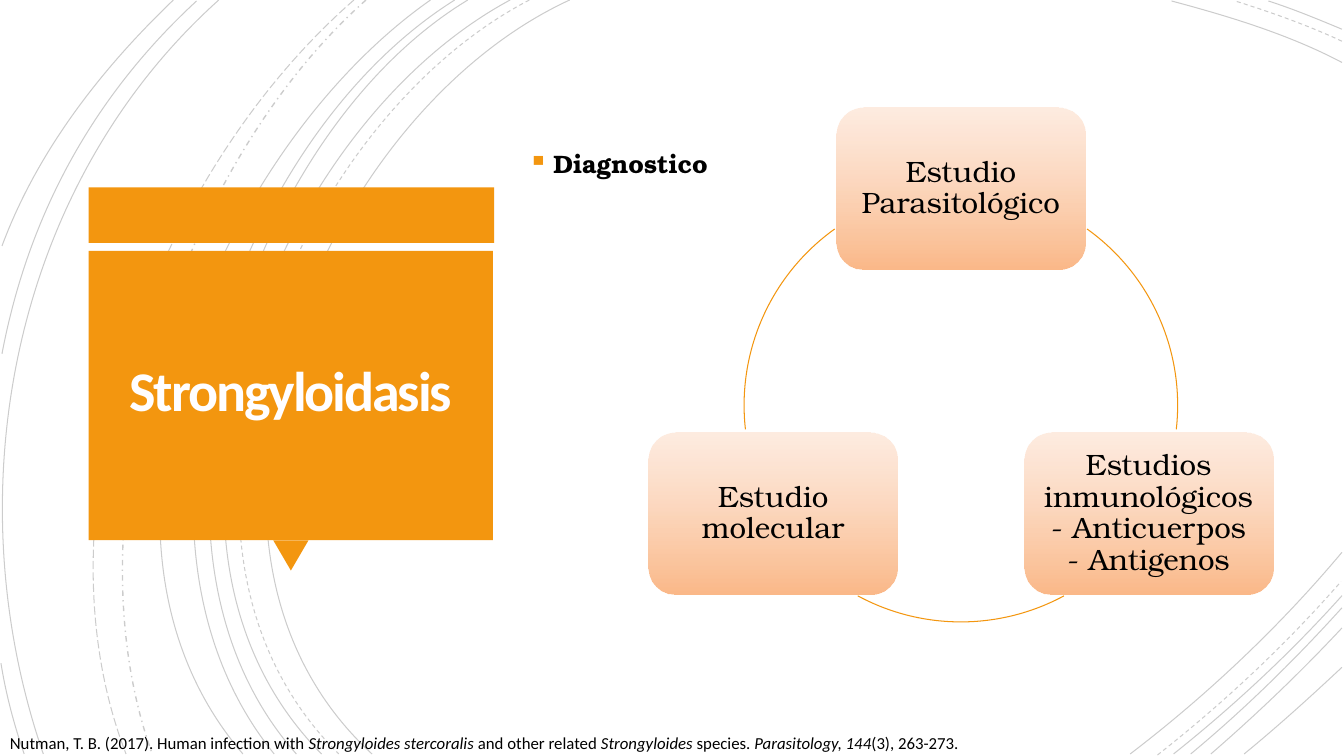
from math import cos, radians, sin, tan

from lxml import etree
from pptx import Presentation
from pptx.dml.color import RGBColor
from pptx.enum.dml import MSO_LINE
from pptx.enum.shapes import MSO_SHAPE
from pptx.enum.text import MSO_ANCHOR, PP_ALIGN
from pptx.oxml.ns import qn
from pptx.util import Cm, Pt

ORANGE = RGBColor(0xF3, 0x96, 0x0F)
PALE = RGBColor(0xFD, 0xDF, 0xCC)
PEACH = RGBColor(0xFB, 0xB3, 0x7F)
BLACK = RGBColor(0, 0, 0)
WHITE = RGBColor(0xFF, 0xFE, 0xFF)
RECT, ROUND, WEDGE = MSO_SHAPE.RECTANGLE, MSO_SHAPE.ROUNDED_RECTANGLE, MSO_SHAPE.ISOSCELES_TRIANGLE
MIDDLE, TOP = MSO_ANCHOR.MIDDLE, MSO_ANCHOR.TOP
LEFT, CENTER = PP_ALIGN.LEFT, PP_ALIGN.CENTER
SOLID, DASH = MSO_LINE.SOLID, MSO_LINE.DASH
DASHDOT, LONG = MSO_LINE.DASH_DOT, MSO_LINE.LONG_DASH
SANS, SERIF = "Calibri", "TeX Gyre Bonum"

TITLE = "Strongyloidasis"
TOPIC = "Diagnostico"
STUDIES = [
    "Estudio Parasitológico",
    "Estudios inmunológicos\n- Anticuerpos\n- Antigenos",
    "Estudio molecular",
]
# Text and whether it is italic
CITE = [
    ("Nutman, T. B. (2017). Human infection with ", False),
    ("Strongyloides stercoralis", True),
    (" and other related ", False),
    ("Strongyloides", True),
    (" species. ", False),
    ("Parasitology, 144", True),
    ("(3), 263-273.", False),
]
# Start, two handles and end of each background curve, by line style
CURVES = {
    (SOLID, 0.75): [
        [(5.65, 0), (3.15, 1.15), (1.43, 5.4), (3.69, 7.48)],
        [(13.31, 0.62), (12.78, 0.34), (12.18, 0.16), (11.62, 0.01)],
        [(11.21, 7.48), (11.97, 6.9), (12.69, 6.22), (13.31, 5.48)],
        [(5.06, 0), (2.7, 1.27), (1.1, 5.37), (3.19, 7.48)],
        [(13.31, 0.29), (13.07, 0.19), (12.83, 0.09), (12.58, 0.01)],
        [(11.64, 7.48), (12.23, 7.01), (12.8, 6.48), (13.31, 5.91)],
        [(4.64, 0), (2.44, 1.33), (1.1, 5.41), (2.94, 7.48)],
        [(11.81, 7.48), (12.34, 7.04), (12.84, 6.55), (13.31, 6.03)],
        [(4.51, 0), (2.31, 1.38), (0.97, 5.33), (2.72, 7.48)],
        [(12.01, 7.48), (12.46, 7.09), (12.9, 6.67), (13.31, 6.23)],
        [(4.27, 0), (2.17, 1.47), (0.53, 5.29), (2.41, 7.48)],
        [(12.34, 7.48), (12.67, 7.21), (12.99, 6.92), (13.31, 6.62)],
        [(2.17, 0), (0.11, 1.85), (-0.46, 4.9), (0.43, 7.48)],
        [(1.95, 0.01), (0.92, 0.96), (0.28, 2.14), (0.02, 3.51)],
        [(0.01, 6.58), (0.06, 6.89), (0.14, 7.19), (0.24, 7.48)],
        [(1.72, 0), (1, 0.69), (0.37, 1.5), (0.02, 2.44)],
    ],
    (DASH, 0.75): [
        [(5.25, 0), (2.85, 1.25), (1.23, 5.37), (3.36, 7.48)],
        [(13.31, 0.41), (12.97, 0.25), (12.6, 0.12), (12.25, 0.01)],
        [(11.48, 7.49), (12.13, 6.98), (12.75, 6.4), (13.3, 5.77)],
    ],
    (DASHDOT, 1): [[(3.63, 0), (1.76, 1.66), (0.65, 5.09), (1.51, 7.48)]],
    (LONG, 0.75): [[(3.51, 0), (1.57, 1.69), (0.29, 4.99), (1.25, 7.48)]],
}
# Shape, place and turn of the title panel's parts
PANEL = [
    (RECT, (0.88, 1.86, 4.02, 0.55), 0),
    (WEDGE, (2.71, 5.36, 0.35, 0.3), 180),
    (RECT, (0.88, 2.49, 4.01, 2.87), 0),
]
HUB_X, HUB_Y, RADIUS = 9.53, 4.02, 2.15
BOX_W, BOX_H = 2.47, 1.61
ARCS = [(-54.4, 6.4), (61.6, 118.4), (173.6, 234.4)]


def cm(inch):
    return Cm(inch * 2.54)


def fade(shape, levels):
    """Set the opacity, in percent, of the shape's colours in turn."""
    tones = shape._element.spPr.iter(qn("a:srgbClr"))
    for tone, level in zip(list(tones), levels):
        etree.SubElement(tone, qn("a:alpha")).set("val", str(level * 1000))


def curve(points, color, width=0.75, dash=SOLID):
    """Draw one cubic curve through its two handles."""
    spots = [(cm(x), cm(y)) for x, y in points]
    pen = slide.shapes.build_freeform(*spots[0])
    pen.add_line_segments(spots[1:], close=False)
    shape = pen.convert_to_shape()
    steps = list(shape._element.spPr.iter(qn("a:lnTo")))
    bend = etree.SubElement(steps[0].getparent(), qn("a:cubicBezTo"))
    for step in steps:
        bend.append(step[0])
        step.getparent().remove(step)
    shape.fill.background()
    shape.shadow.inherit = False
    shape.line.color.rgb = color
    shape.line.width = Pt(width)
    shape.line.dash_style = dash
    return shape


def block(kind, place):
    shape = slide.shapes.add_shape(kind, *map(cm, place))
    shape.shadow.inherit = False
    shape.line.fill.background()
    return shape


def write(shape, lines, look, align=LEFT, gap=1.0, anchor=TOP, inset=None):
    """Fill a shape with one paragraph; lines hold (text, italic) runs."""
    frame = shape.text_frame
    frame.word_wrap = True
    frame.vertical_anchor = anchor
    if inset is not None:
        for side in ("left", "right", "top", "bottom"):
            setattr(frame, "margin_" + side, cm(inset))
    para = frame.paragraphs[0]
    para.alignment = align
    para.line_spacing = gap
    for i, runs in enumerate(lines):
        if i:
            para.add_line_break()
        for text, slant in runs:
            run = para.add_run()
            run.text = text
            run.font.color.rgb = look["color"]
            run.font.italic = slant
            for key in ("name", "size", "bold"):
                setattr(run.font, key, look[key])
    return para


def label(place):
    return slide.shapes.add_textbox(*map(cm, place))


def look(name, size, color=BLACK, bold=False):
    return {"name": name, "size": Pt(size), "color": color, "bold": bold}


def bullet(para):
    props = para._p.get_or_add_pPr()
    props.set("marL", str(cm(0.25)))
    props.set("indent", str(-cm(0.25)))
    tint = etree.SubElement(props, qn("a:buClr"))
    etree.SubElement(tint, qn("a:srgbClr")).set("val", str(ORANGE))
    etree.SubElement(props, qn("a:buSzPct")).set("val", "110000")
    etree.SubElement(props, qn("a:buChar")).set("char", "▪")


def ring(angle):
    turn = radians(angle)
    return HUB_X + RADIUS * cos(turn), HUB_Y + RADIUS * sin(turn)


def arc(start, end):
    """Give the four points of a curve along the ring."""
    reach = 4 / 3 * tan(radians(end - start) / 4)
    (ax, ay), (bx, by) = ring(start), ring(end)
    return [
        (ax, ay),
        (ax - reach * (ay - HUB_Y), ay + reach * (ax - HUB_X)),
        (bx + reach * (by - HUB_Y), by - reach * (bx - HUB_X)),
        (bx, by),
    ]


deck = Presentation()
deck.slide_width, deck.slide_height = cm(13.33), cm(7.5)
slide = deck.slides.add_slide(deck.slide_layouts[6])

for (dash, width), group in CURVES.items():
    for points in group:
        fade(curve(points, BLACK, width, dash), [20])

for kind, place, turn in PANEL:
    part = block(kind, place)
    part.rotation = turn
    part.fill.solid()
    part.fill.fore_color.rgb = ORANGE

head = write(label((0.97, 2.57, 3.83, 2.69)), [[(TITLE, False)]],
             look(SANS, 40, WHITE, True), CENTER, 0.85, MIDDLE, 0.25)
head.runs[0].font._element.set("spc", "-150")
write(label((0, 7.22, 12.7, 0.3)), [CITE], look(SANS, 12))
bullet(write(label((5.14, 1.21, 6.89, 0.77)), [[(TOPIC, False)]],
             look(SERIF, 18, bold=True), gap=1.2, anchor=MIDDLE))

for i, (study, span) in enumerate(zip(STUDIES, ARCS)):
    x, y = ring(-90 + i * 360 / len(STUDIES))
    box = block(ROUND, (x - BOX_W / 2, y - BOX_H / 2, BOX_W, BOX_H))
    box.fill.gradient()
    box.fill.gradient_angle = 270
    for stop, color in zip(box.fill.gradient_stops, (PALE, PEACH)):
        stop.color.rgb = color
    fade(box, [60, 92])
    lines = [[(line, False)] for line in study.split("\n")]
    write(box, lines, look(SERIF, 21), CENTER, 0.9, MIDDLE, 0.09)
    curve(arc(*span), ORANGE)

deck.save("out.pptx")
